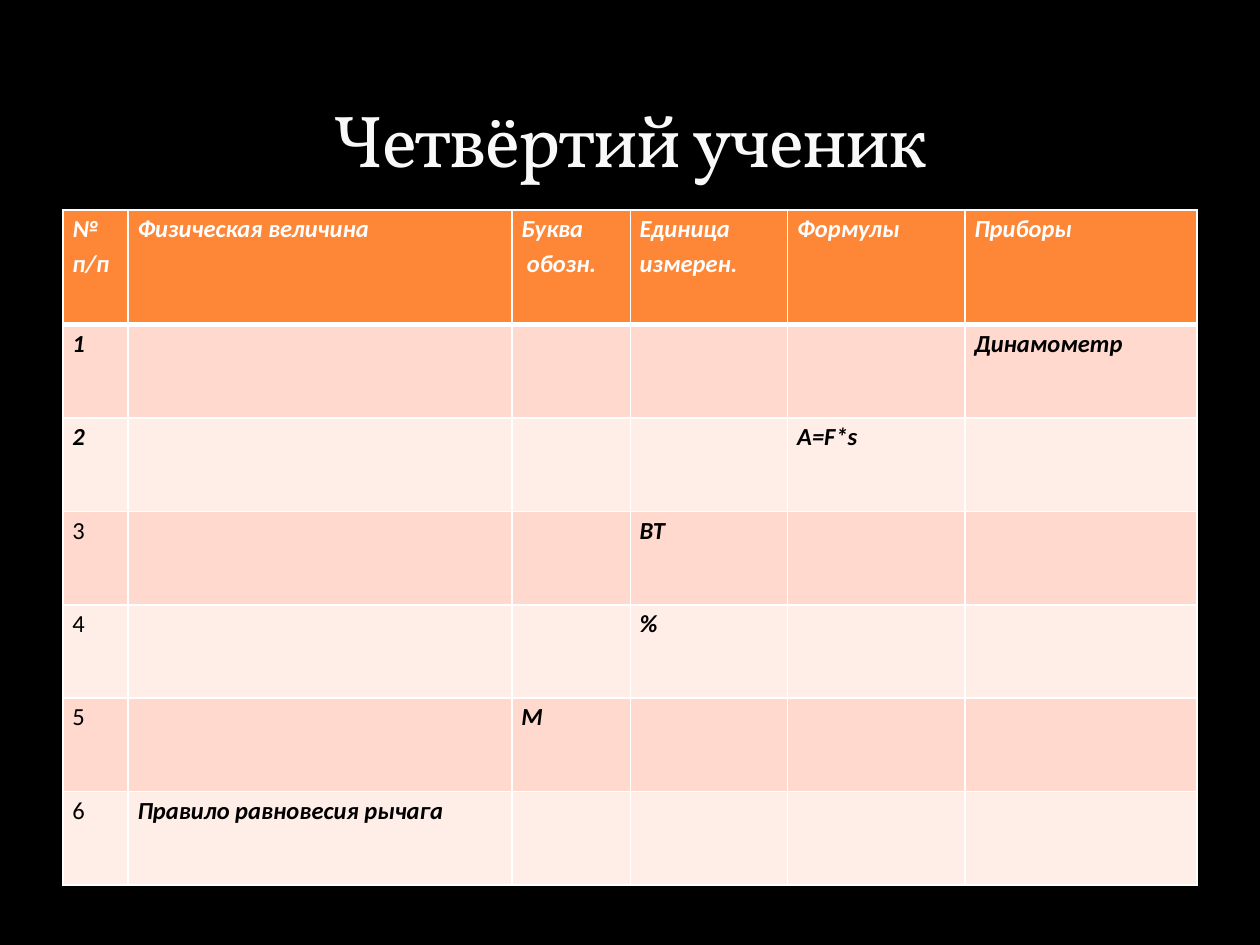
import pptx
import pptx.dml.color
import pptx.enum.text
import pptx.oxml.ns
import pptx.util
import lxml.etree

Pt = pptx.util.Pt

TITLE = "Четвёртий ученик"
HEADERS = ["№ п/п", "Физическая величина", "Буква\n обозн.",
           "Единица измерен.", "Формулы", "Приборы"]
ANSWERS = [
    {5: "Динамометр"},
    {4: "A=F*s"},
    {3: "ВТ"},
    {3: "%"},
    {2: "М"},
    {1: "Правило равновесия рычага"},
]
BOLD_NUMBERS = 2
COLUMN_WIDTHS = [37.2, 219.4, 67.6, 90, 101.2, 132.6]
HEADER_HEIGHT, ROW_HEIGHT = 65.5, 53.4
LEFT, WIDTH = 36, 648
TABLE_TOP = 120
WHITE, BLACK, ORANGE = "FFFFFF", "000000", "FE8637"
BANDS = ["FFD9CE", "FFEDE8"]


def colour(value):
    return pptx.dml.color.RGBColor.from_string(value)


def write(frame, text, size=14, font="Calibri", color=BLACK, bold=True,
          italic=True, align=None, spacing=1.15, tracking=0):
    for index, line in enumerate(text.split("\n")):
        para = frame.add_paragraph() if index else frame.paragraphs[0]
        para.alignment = align
        para.line_spacing = spacing
        span = para.add_run()
        span.text = line
        span.font.size = Pt(size)
        span.font.name = font
        span.font.bold = bold
        span.font.italic = italic
        span.font.color.rgb = colour(color)
        if tracking:
            span._r.get_or_add_rPr().set("spc", str(tracking * 100))


def add_border(cell, side, width):
    qn = pptx.oxml.ns.qn
    line = lxml.etree.SubElement(cell._tc.get_or_add_tcPr(), qn(f"a:ln{side}"))
    line.set("w", str(Pt(width)))
    fill = lxml.etree.SubElement(line, qn("a:solidFill"))
    lxml.etree.SubElement(fill, qn("a:srgbClr")).set("val", WHITE)


def format_cell(cell, row):
    cell.margin_left = cell.margin_right = Pt(5.4)
    cell.margin_top = cell.margin_bottom = 0
    widths = {"L": 1, "R": 1, "T": 3 if row == 1 else 1, "B": 3 if row == 0 else 1}
    for side, width in widths.items():
        add_border(cell, side, width)
    cell.fill.solid()
    cell.fill.fore_color.rgb = colour(BANDS[(row - 1) % 2] if row else ORANGE)


def add_title(page):
    box = page.shapes.title
    box.left, box.top, box.width, box.height = Pt(LEFT), Pt(12), Pt(WIDTH), Pt(96)
    box.text_frame.vertical_anchor = pptx.enum.text.MSO_ANCHOR.BOTTOM
    write(box.text_frame, TITLE, size=42, font="Vollkorn", color="F9F9F9",
          bold=False, italic=False, align=pptx.enum.text.PP_ALIGN.CENTER,
          spacing=1.0, tracking=-1)


def add_answer_table(page):
    heights = [HEADER_HEIGHT] + [ROW_HEIGHT] * len(ANSWERS)
    table = page.shapes.add_table(
        len(heights), len(HEADERS), Pt(LEFT), Pt(TABLE_TOP),
        Pt(WIDTH), Pt(sum(heights))).table
    for column, width in zip(table.columns, COLUMN_WIDTHS):
        column.width = Pt(width)
    contents = [dict(enumerate(HEADERS))]
    contents += [{0: str(n), **answer} for n, answer in enumerate(ANSWERS, 1)]
    for row, (height, texts) in enumerate(zip(heights, contents)):
        table.rows[row].height = Pt(height)
        for column in range(len(HEADERS)):
            cell = table.cell(row, column)
            format_cell(cell, row)
            if column in texts:
                strong = column > 0 or row <= BOLD_NUMBERS
                write(cell.text_frame, texts[column], bold=strong, italic=strong,
                      color=BLACK if row else WHITE)


def main():
    deck = pptx.Presentation()
    deck.slide_width, deck.slide_height = Pt(720), Pt(540)
    page = deck.slides.add_slide(deck.slide_layouts[5])
    page.background.fill.solid()
    page.background.fill.fore_color.rgb = colour(BLACK)
    add_answer_table(page)
    add_title(page)
    deck.save("out.pptx")


if __name__ == "__main__":
    main()
